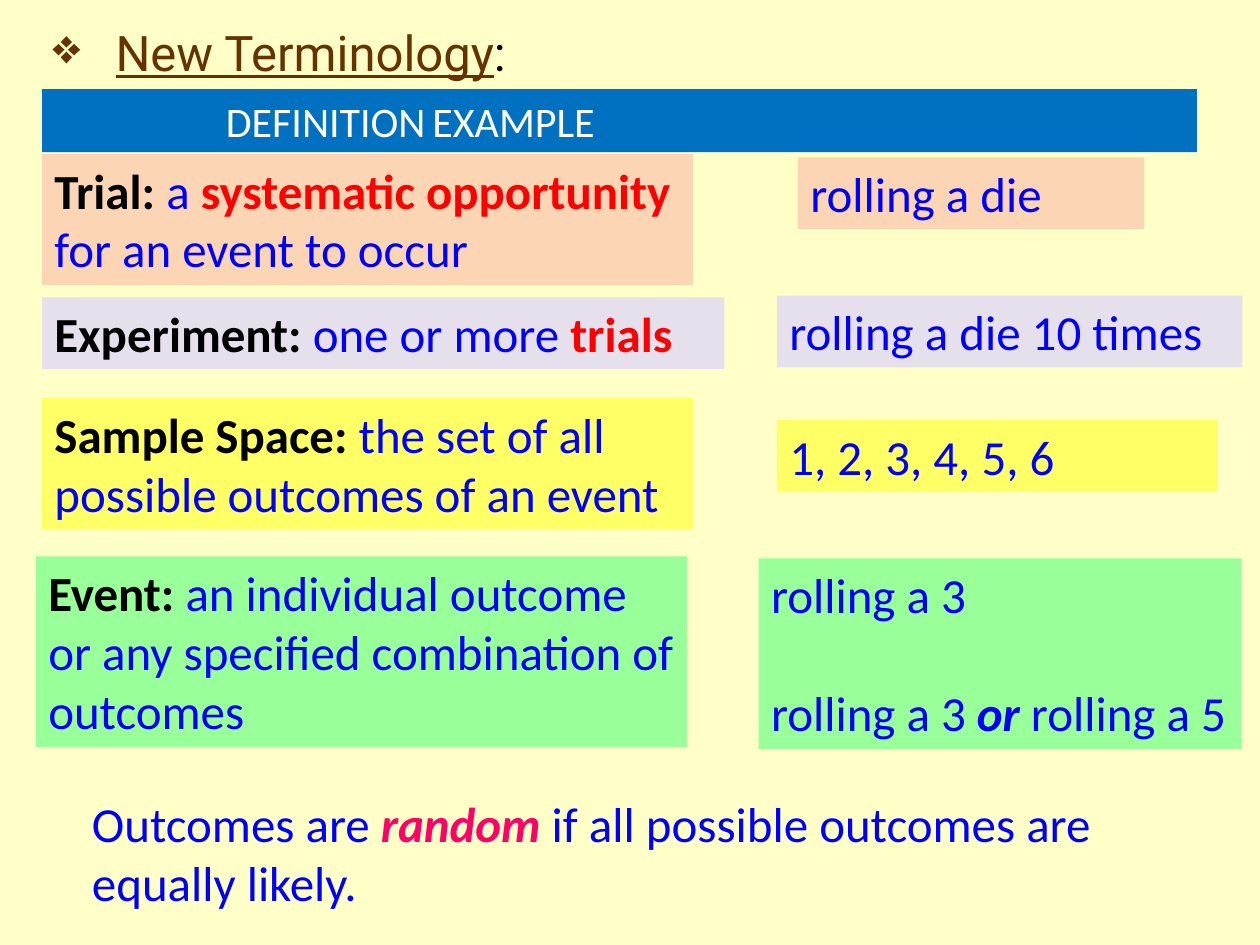
from dataclasses import dataclass
from typing import Any, NamedTuple

from lxml import etree
from pptx import Presentation
from pptx.dml.color import RGBColor
from pptx.enum.shapes import MSO_SHAPE
from pptx.enum.text import MSO_ANCHOR, MSO_AUTO_SIZE, PP_ALIGN
from pptx.oxml.ns import qn
from pptx.util import Pt

RECTANGLE = MSO_SHAPE.RECTANGLE
TOP = MSO_ANCHOR.TOP
LEFT = PP_ALIGN.LEFT
FIT_SHAPE = MSO_AUTO_SIZE.SHAPE_TO_FIT_TEXT

CREAM = RGBColor(0xFF, 0xFF, 0xC8)
HEADER_BLUE = RGBColor(0x00, 0x70, 0xC0)
PEACH = RGBColor(0xFC, 0xD5, 0xB5)
LAVENDER = RGBColor(0xE6, 0xE0, 0xEC)
YELLOW = RGBColor(0xFF, 0xFF, 0x66)
GREEN = RGBColor(0x99, 0xFF, 0x99)
BROWN = RGBColor(0x66, 0x33, 0x00)
BLACK = RGBColor(0x00, 0x00, 0x00)
WHITE = RGBColor(0xFF, 0xFF, 0xFF)
BLUE = RGBColor(0x00, 0x00, 0xFF)
RED = RGBColor(0xFF, 0x00, 0x00)
PINK = RGBColor(0xFF, 0x00, 0x66)

BODY = {"name": "Calibri", "size": Pt(28)}
BOLD = BODY | {"bold": True}
BOLD_ITALIC = BOLD | {"italic": True}
HEADER = BODY | {"size": Pt(24)}
TITLE = BODY | {"name": "Roboto"}
TITLE_UNDERLINED = TITLE | {"underline": True}

LINE_HEIGHT = 34
BOX_PADDING = 7
TITLE_INDENT = 36
DEFINITION_INDENT = 98
EXAMPLE_TAB = 432


class Span(NamedTuple):
    text: str
    color: RGBColor = BLUE
    format: dict[str, Any] = BODY


@dataclass
class Box:
    left: float
    top: float
    width: float
    lines: int
    paragraphs: list[list[Span]]
    fill: RGBColor | None = None
    paragraph_gap: float = 0


def term(text: str) -> Span:
    return Span(text, BLACK, BOLD)


TITLE_BOX = Box(23, 9.5, 612, 1, [[
    Span("New Terminology", BROWN, TITLE_UNDERLINED), Span(":", BLACK, TITLE)]])
HEADER_BOX = Box(24, 51, 660, 1, [[
    Span("DEFINITION\tEXAMPLE", WHITE, HEADER)]], HEADER_BLUE)
BOXES = [
    Box(24, 88, 372, 2, [[
        term("Trial: "), Span("a "), Span("systematic opportunity ", RED, BOLD),
        Span("for an event to occur")]], PEACH),
    Box(456, 90, 198, 1, [[Span("rolling a die")]], PEACH),
    Box(24, 170, 390, 1, [[
        term("Experiment: "), Span("one or more "), Span("trials", RED, BOLD)]], LAVENDER),
    Box(444, 169, 266, 1, [[Span("rolling a die 10 times")]], LAVENDER),
    Box(24, 227.5, 372, 2, [[
        term("Sample Space: "),
        Span("the set of all possible outcomes of an event")]], YELLOW),
    Box(444, 240, 252, 1, [[Span("1, 2, 3, 4, 5, 6")]], YELLOW),
    Box(20.5, 318, 372, 3, [[
        term("Event: "),
        Span("an individual outcome or any specified combination of outcomes")]], GREEN),
    Box(433.5, 319, 276, 3, [
        [Span("rolling a 3")],
        [Span("rolling a 3 "), Span("or", BLUE, BOLD_ITALIC), Span(" rolling a 5")],
    ], GREEN, LINE_HEIGHT),
    Box(45.5, 450, 612, 2, [[
        Span("Outcomes are "), Span("random", PINK, BOLD_ITALIC),
        Span(" if all possible outcomes are equally likely.")]]),
]


def add_span(paragraph, span: Span) -> None:
    run = paragraph.add_run()
    run.text = span.text
    for name, value in span.format.items():
        setattr(run.font, name, value)
    run.font.color.rgb = span.color


def add_box(slide, box: Box, height: float | None = None):
    height = height or box.lines * LINE_HEIGHT + BOX_PADDING
    bounds = [Pt(value) for value in (box.left, box.top, box.width, height)]
    if box.fill is None:
        shape = slide.shapes.add_textbox(*bounds)
    else:
        shape = slide.shapes.add_shape(RECTANGLE, *bounds)
        shape.shadow.inherit = False
        shape.fill.solid()
        shape.fill.fore_color.rgb = box.fill
        shape.line.fill.background()
    frame = shape.text_frame
    frame_format = {"word_wrap": True, "auto_size": FIT_SHAPE, "vertical_anchor": TOP}
    for name, value in frame_format.items():
        setattr(frame, name, value)
    for index, spans in enumerate(box.paragraphs):
        paragraph = frame.add_paragraph() if index else frame.paragraphs[0]
        paragraph.alignment = LEFT
        if index:
            paragraph.space_before = Pt(box.paragraph_gap)
        for span in spans:
            add_span(paragraph, span)
    return shape


def set_indent(shape, margin: float, indent: float):
    properties = shape.text_frame.paragraphs[0]._p.get_or_add_pPr()
    properties.set("marL", str(Pt(margin)))
    properties.set("indent", str(Pt(indent)))
    return properties


def add_title(slide) -> None:
    shape = add_box(slide, TITLE_BOX)
    properties = set_indent(shape, TITLE_INDENT, -TITLE_INDENT)
    etree.SubElement(properties, qn("a:buChar"), char="❖")


def add_header(slide) -> None:
    shape = add_box(slide, HEADER_BOX, 36)
    properties = set_indent(shape, 0, DEFINITION_INDENT)
    tabs = etree.SubElement(properties, qn("a:tabLst"))
    etree.SubElement(tabs, qn("a:tab"), pos=str(Pt(EXAMPLE_TAB)), algn="l")


def main() -> None:
    presentation = Presentation()
    presentation.slide_width = Pt(720)
    presentation.slide_height = Pt(540)
    slide = presentation.slides.add_slide(presentation.slide_layouts[6])
    slide.background.fill.solid()
    slide.background.fill.fore_color.rgb = CREAM
    add_title(slide)
    add_header(slide)
    for box in BOXES:
        add_box(slide, box)
    presentation.save("out.pptx")


if __name__ == "__main__":
    main()
